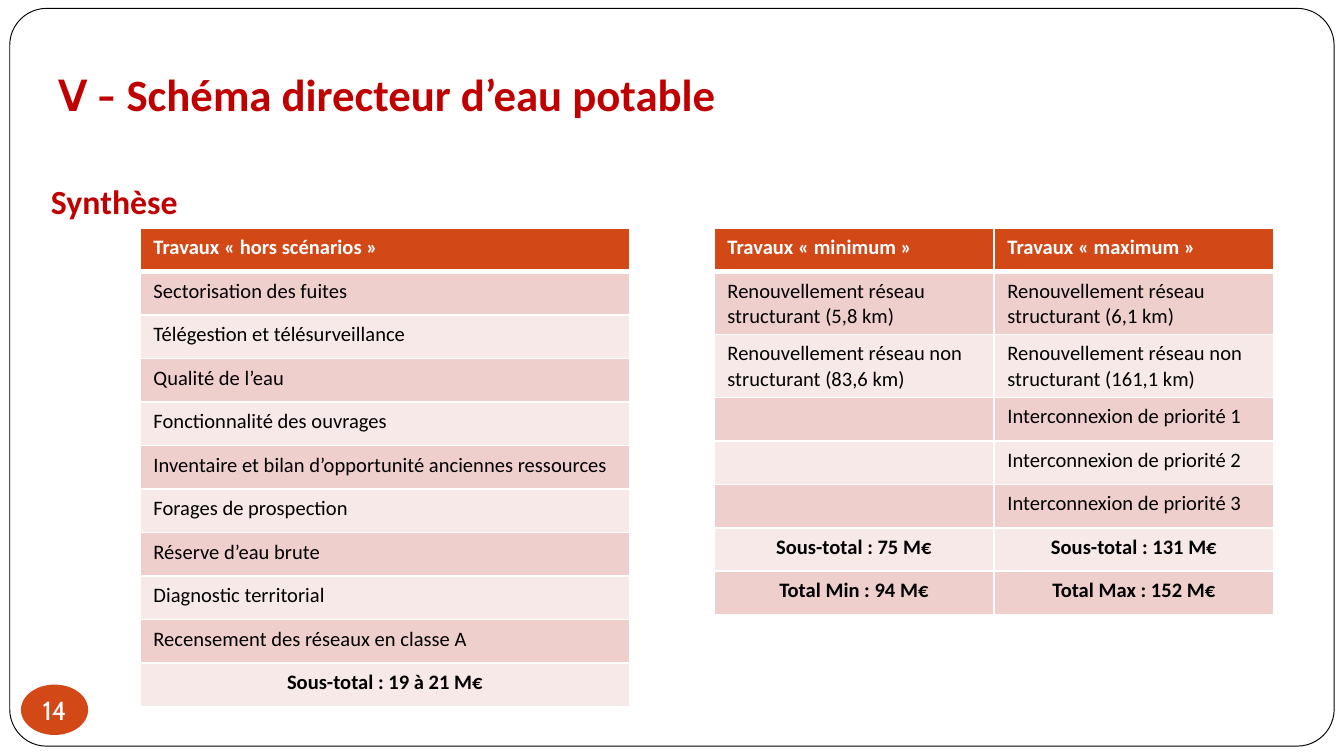
from lxml import etree
from pptx import Presentation
from pptx import util as u
from pptx.dml import color
from pptx.enum import shapes, text
from pptx.oxml import ns

PX = u.Inches(1) // 96


def rgb(value):
    return color.RGBColor.from_string(value)


def write(para, words, **formats):
    span = para.add_run()
    span.text = words
    tint = formats.pop("color")
    for name, value in formats.items():
        setattr(span.font, name, value)
    span.font.color.rgb = rgb(tint)


deck = Presentation()
deck.slide_width = 960 * PX
deck.slide_height = 540 * PX
page = deck.slides.add_slide(deck.slide_layouts[5])

frame = page.shapes.add_shape(
    shapes.MSO_SHAPE.ROUNDED_RECTANGLE, 7 * PX, 6 * PX, 946 * PX, 527 * PX
)
frame.adjustments[0] = 0.05
frame.shadow.inherit = False
frame.fill.solid()
frame.fill.fore_color.rgb = rgb("FFFFFF")
frame.line.color.rgb = rgb("000000")
frame.line.width = u.Pt(0.5)
page.shapes.element.insert(2, frame.element)

title = page.shapes.title
placement = {"left": 32, "top": 22, "width": 930, "height": 90}
for name, value in placement.items():
    setattr(title, name, value * PX)
title.text_frame.auto_size = text.MSO_AUTO_SIZE.NONE
title.text_frame.vertical_anchor = text.MSO_ANCHOR.MIDDLE
para = title.text_frame.paragraphs[0]
para.alignment = text.PP_ALIGN.LEFT
heading = {"size": u.Pt(24), "bold": True, "color": "C00000"}
write(para, "V - ", name="Cabin", **heading)
write(para, "Schéma directeur d’eau potable", name="Calibri", **heading)

badge = page.shapes.add_shape(
    shapes.MSO_SHAPE.OVAL, 15 * PX, 489 * PX, 48 * PX, 36 * PX
)
badge.shadow.inherit = False
badge.fill.solid()
badge.fill.fore_color.rgb = rgb("D34817")
badge.line.fill.background()
badge_format = {
    "margin_left": 0,
    "margin_top": 0,
    "margin_right": 0,
    "margin_bottom": 0,
    "word_wrap": False,
    "vertical_anchor": text.MSO_ANCHOR.MIDDLE,
}
for name, value in badge_format.items():
    setattr(badge.text_frame, name, value)
para = badge.text_frame.paragraphs[0]
para.alignment = text.PP_ALIGN.CENTER
write(para, "14", name="Cabin", size=u.Pt(14), color="FFFFFF")

box = page.shapes.add_textbox(27 * PX, 124 * PX, 446 * PX, 403 * PX)
box.text_frame.word_wrap = True
write(box.text_frame.paragraphs[0], "Synthèse",
      name="Calibri", size=u.Pt(18.1), bold=True, color="C00000")

common_works = [
    ["Travaux « hors scénarios »"],
    ["Sectorisation des fuites"],
    ["Télégestion et télésurveillance"],
    ["Qualité de l’eau"],
    ["Fonctionnalité des ouvrages"],
    ["Inventaire et bilan d’opportunité anciennes ressources"],
    ["Forages de prospection"],
    ["Réserve d’eau brute"],
    ["Diagnostic territorial"],
    ["Recensement des réseaux en classe A"],
    ["Sous-total : 19 à 21 M€"],
]
scenario_works = [
    ["Travaux « minimum »", "Travaux « maximum »"],
    ["Renouvellement réseau structurant (5,8 km)",
     "Renouvellement réseau structurant (6,1 km)"],
    ["Renouvellement réseau non structurant (83,6 km)",
     "Renouvellement réseau non structurant (161,1 km)"],
    ["", "Interconnexion de priorité 1"],
    ["", "Interconnexion de priorité 2"],
    ["", "Interconnexion de priorité 3"],
    ["Sous-total : 75 M€", "Sous-total : 131 M€"],
    ["Total Min : 94 M€", "Total Max : 152 M€"],
]
row_height = 342 * PX // len(common_works)

for left, width, rows in [(100, 350, common_works), (510, 400, scenario_works)]:
    table = page.shapes.add_table(
        len(rows), len(rows[0]), left * PX, 163 * PX,
        width * PX, row_height * len(rows)
    ).table
    for r, row in enumerate(rows):
        table.rows[r].height = row_height
        for c, words in enumerate(row):
            cell = table.cell(r, c)
            header = r == 0
            total = words.startswith(("Sous-total", "Total"))
            cell.fill.solid()
            cell.fill.fore_color.rgb = rgb(
                "D34817" if header else ("F7E9E8", "EFCFCC")[r % 2]
            )
            para = cell.text_frame.paragraphs[0]
            if total:
                para.alignment = text.PP_ALIGN.CENTER
            if words:
                write(para, words, name="Calibri", size=u.Pt(11),
                      bold=header or total,
                      color="FFFFFF" if header else "000000")
            else:
                etree.SubElement(para._p, ns.qn("a:endParaRPr"), sz="1100")
            properties = cell._tc.get_or_add_tcPr()
            for i, side in enumerate("LRTB"):
                thick = (r, side) in [(0, "B"), (1, "T")]
                line = etree.Element(
                    ns.qn("a:ln" + side), w=str(u.Pt(3 if thick else 1))
                )
                fill = etree.SubElement(line, ns.qn("a:solidFill"))
                etree.SubElement(fill, ns.qn("a:srgbClr"), val="FFFFFF")
                properties.insert(i, line)

deck.save("out.pptx")
